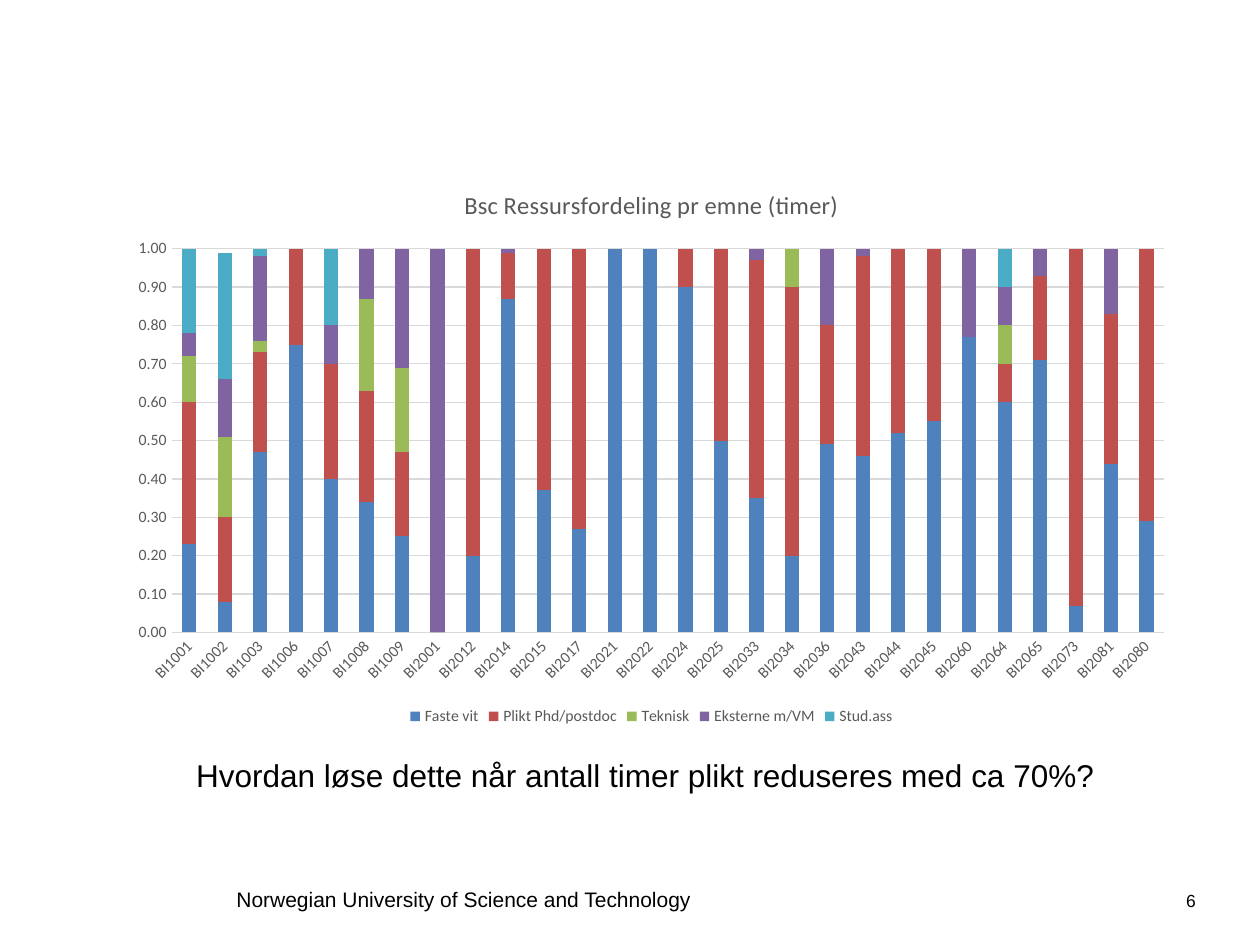
import pptx
import pptx.chart.data
import pptx.dml.color
import pptx.enum.chart
import pptx.enum.text
import pptx.util

Pt = pptx.util.Pt
Align = pptx.enum.text.PP_ALIGN

COLORS = {
    "text": "000000",
    "label": "595959",
    "grid": "D9D9D9",
    "Faste vit": "4F81BD",
    "Plikt Phd/postdoc": "C0504D",
    "Teknisk": "9BBB59",
    "Eksterne m/VM": "8064A2",
    "Stud.ass": "4BACC6",
}
SERIES = ["Faste vit", "Plikt Phd/postdoc", "Teknisk", "Eksterne m/VM", "Stud.ass"]
COURSES = {
    "BI1001": (0.23, 0.37, 0.12, 0.06, 0.23),
    "BI1002": (0.08, 0.22, 0.21, 0.15, 0.33),
    "BI1003": (0.47, 0.26, 0.03, 0.22, 0.03),
    "BI1006": (0.75, 0.25, 0, 0, 0),
    "BI1007": (0.4, 0.3, 0, 0.1, 0.2),
    "BI1008": (0.34, 0.29, 0.24, 0.13, 0),
    "BI1009": (0.25, 0.22, 0.22, 0.32, 0),
    "BI2001": (0, 0, 0, 1, 0),
    "BI2012": (0.2, 0.8, 0, 0, 0),
    "BI2014": (0.87, 0.12, 0, 0.01, 0),
    "BI2015": (0.37, 0.63, 0, 0, 0),
    "BI2017": (0.27, 0.74, 0, 0, 0),
    "BI2021": (1, 0, 0, 0, 0),
    "BI2022": (1, 0, 0, 0, 0),
    "BI2024": (0.9, 0.1, 0, 0, 0),
    "BI2025": (0.5, 0.5, 0, 0, 0),
    "BI2033": (0.35, 0.62, 0, 0.04, 0),
    "BI2034": (0.2, 0.7, 0.1, 0, 0),
    "BI2036": (0.49, 0.31, 0, 0.21, 0),
    "BI2043": (0.46, 0.52, 0, 0.02, 0),
    "BI2044": (0.52, 0.48, 0, 0, 0),
    "BI2045": (0.55, 0.45, 0, 0, 0),
    "BI2060": (0.77, 0, 0, 0.23, 0),
    "BI2064": (0.6, 0.1, 0.1, 0.1, 0.1),
    "BI2065": (0.71, 0.22, 0, 0.08, 0),
    "BI2073": (0.07, 0.93, 0, 0, 0),
    "BI2081": (0.44, 0.39, 0, 0.17, 0),
    "BI2080": (0.29, 0.71, 0, 0, 0),
}


def color(name):
    return pptx.dml.color.RGBColor.from_string(COLORS[name])


def style_font(font, name, size, color_name):
    font.name = name
    font.size = Pt(size)
    font.bold = False
    font.color.rgb = color(color_name)


def style_line(line, color_name):
    line.color.rgb = color(color_name)
    line.width = Pt(0.75)


def add_text(slide, box, text, size, alignment=Align.LEFT, wrap=True):
    shape = slide.shapes.add_textbox(*map(Pt, box))
    shape.text_frame.word_wrap = wrap
    paragraph = shape.text_frame.paragraphs[0]
    paragraph.text = text
    paragraph.alignment = alignment
    style_font(paragraph.font, "Arial", size, "text")


def style_axes(chart):
    for axis in (chart.category_axis, chart.value_axis):
        axis.major_tick_mark = pptx.enum.chart.XL_TICK_MARK.NONE
        axis.minor_tick_mark = pptx.enum.chart.XL_TICK_MARK.NONE
        style_font(axis.tick_labels.font, "Calibri", 9, "label")
    style_line(chart.category_axis.format.line, "grid")
    label_body = chart.category_axis._element.txPr.bodyPr
    label_body.set("rot", "-2700000")
    label_body.set("vert", "horz")

    value_axis = chart.value_axis
    value_axis.minimum_scale = 0
    value_axis.maximum_scale = 1
    value_axis.major_unit = 0.1
    value_axis.tick_labels.number_format = "0.00"
    value_axis.tick_labels.number_format_is_linked = False
    value_axis.format.line.fill.background()
    style_line(value_axis.major_gridlines.format.line, "grid")


def add_resource_chart(slide, box):
    data = pptx.chart.data.CategoryChartData(number_format="0.00")
    data.categories = list(COURSES)
    for name, values in zip(SERIES, zip(*COURSES.values())):
        data.add_series(name, values)
    chart = slide.shapes.add_chart(
        pptx.enum.chart.XL_CHART_TYPE.COLUMN_STACKED, *map(Pt, box), data
    ).chart
    style_font(chart.font, "Calibri", 10, "text")

    chart.has_title = True
    title = chart.chart_title.text_frame
    title.text = "Bsc Ressursfordeling pr emne (timer)"
    style_font(title.paragraphs[0].font, "Calibri", 14, "label")
    chart.chart_title.include_in_layout = False

    chart.has_legend = True
    chart.legend.position = pptx.enum.chart.XL_LEGEND_POSITION.BOTTOM
    chart.legend.include_in_layout = False
    style_font(chart.legend.font, "Calibri", 9, "label")

    plot = chart.plots[0]
    plot.gap_width = 150
    plot.overlap = 100
    plot.vary_by_categories = False
    for series in plot.series:
        series.format.fill.solid()
        series.format.fill.fore_color.rgb = color(series.name)
    style_axes(chart)


def add_footer(slide, box):
    left, top, width, height = box
    number_width = 27
    add_text(slide, (left, top, 300, height),
             "Norwegian University of Science and Technology", 12)
    add_text(slide, (left + width - number_width, top + 2, number_width, height),
             "6", 10, Align.CENTER)


def main():
    presentation = pptx.Presentation()
    presentation.slide_width = Pt(720)
    presentation.slide_height = Pt(540)
    slide = presentation.slides.add_slide(presentation.slide_layouts[6])
    add_footer(slide, (128, 503, 566, 22))
    add_resource_chart(slide, (67, 94.5, 610.5, 323))
    add_text(slide, (105, 428.5, 538, 29),
             "Hvordan løse dette når antall timer plikt reduseres med ca 70%?",
             18, wrap=False)
    presentation.save("out.pptx")


if __name__ == "__main__":
    main()
